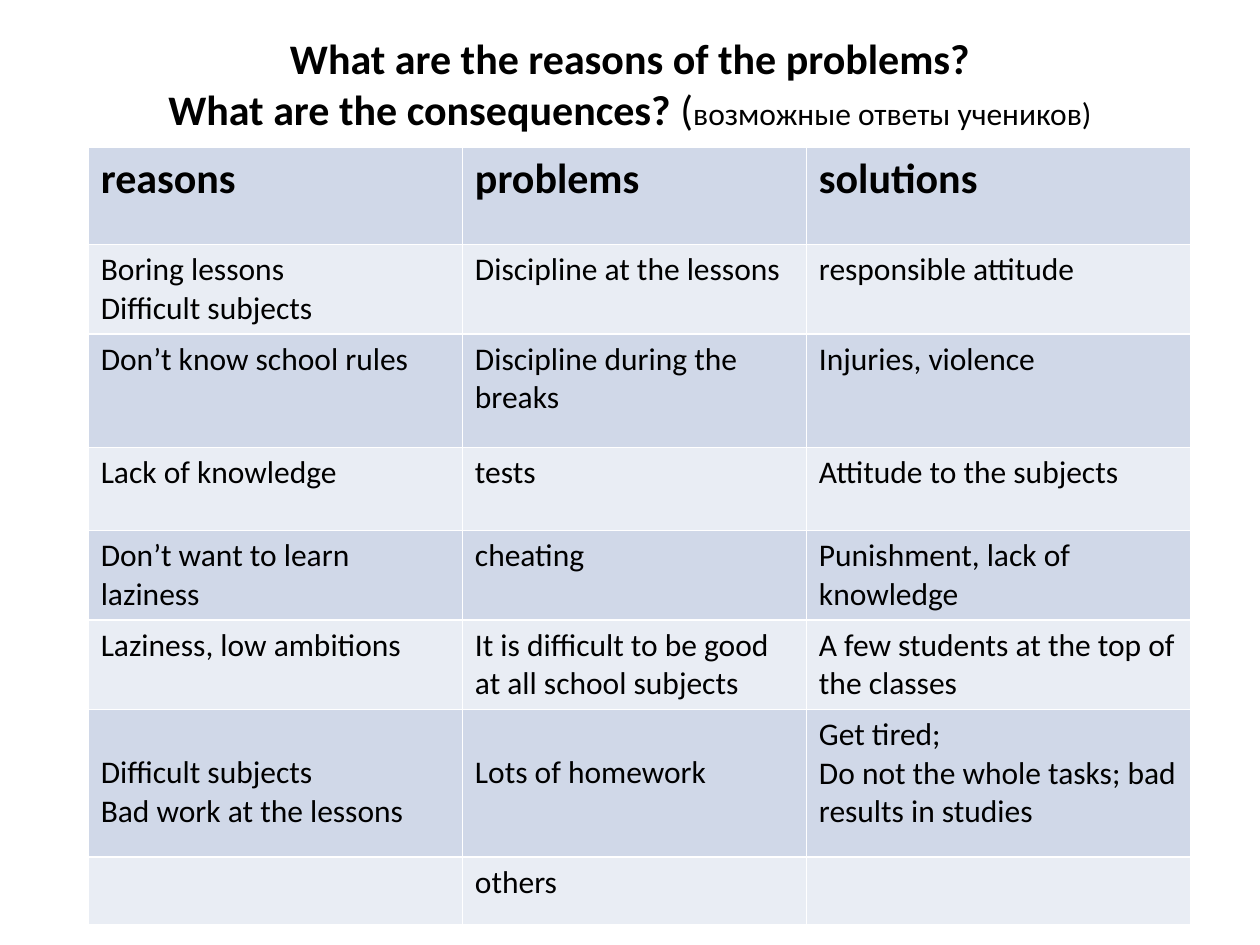
from lxml.etree import SubElement
from pptx import Presentation
from pptx.dml.color import RGBColor
from pptx.enum.text import MSO_ANCHOR, MSO_AUTO_SIZE, PP_ALIGN
from pptx.oxml.ns import qn
from pptx.util import Inches, Pt

SLIDE_WIDTH, SLIDE_HEIGHT = 10, 7.5
GRID_COLUMNS, GRID_ROWS = 100, 75

COLUMN_WIDTHS = [29.7, 27.3, 30.5]
ROW_HEIGHTS = [7.7, 7.1, 9, 6.6, 7.1, 7.1, 11.7, 5.4]
HEADINGS = ["reasons", "problems", "solutions"]
ANSWERS = [
    ["Boring lessons\nDifficult subjects", "Discipline at the lessons", "responsible attitude"],
    ["Don’t know school rules", "Discipline during the breaks", "Injuries, violence"],
    ["Lack of knowledge", "tests", "Attitude to the subjects"],
    ["Don’t want to learn\nlaziness", "cheating", "Punishment, lack of knowledge"],
    ["Laziness, low ambitions", "It is difficult to be good at all school subjects",
     "A few students at the top of the classes"],
    ["Difficult subjects\nBad work at the lessons", "Lots of homework",
     "Get tired;\nDo not the whole tasks; bad results in studies"],
    ["", "others", ""],
]
LOWERED_CELLS = [(6, 0), (6, 1)]


def color(hex_string):
    return RGBColor.from_string(hex_string)


def add_text(paragraph, text, size=18, bold=False, font="Calibri", fill="000000"):
    run = paragraph.add_run()
    run.text = text
    run.font.name = font
    run.font.size = Pt(size)
    run.font.bold = bold
    run.font.color.rgb = color(fill)


def across(columns):
    return Inches(SLIDE_WIDTH * columns / GRID_COLUMNS)


def down(rows):
    return Inches(SLIDE_HEIGHT * rows / GRID_ROWS)


class SlideBuilder:
    bands = ["D0D8E8", "E9EDF4"]
    border = "FFFFFF"
    heading_size = 24

    def __init__(self, presentation):
        self.slide = presentation.slides.add_slide(presentation.slide_layouts[5])

    def title(self, left, top, width, height, runs):
        """Fill the title placeholder with (text, format) pairs."""
        shape = self.slide.shapes.title
        shape.left, shape.top = across(left), down(top)
        shape.width, shape.height = across(width), down(height)
        frame = shape.text_frame
        frame.auto_size = MSO_AUTO_SIZE.NONE
        frame.word_wrap = True
        frame.vertical_anchor = MSO_ANCHOR.MIDDLE
        paragraph = frame.paragraphs[0]
        paragraph.alignment = PP_ALIGN.CENTER
        for text, text_format in runs:
            if text == "\n":
                paragraph.add_line_break()
            else:
                add_text(paragraph, text, **text_format)

    def table(self, left, top, widths, heights, rows):
        table = self.slide.shapes.add_table(
            len(heights), len(widths), across(left), down(top),
            across(sum(widths)), down(sum(heights))).table
        table.first_row = table.horz_banding = False
        for column, width in zip(table.columns, widths):
            column.width = across(width)
        for row, height in zip(table.rows, heights):
            row.height = down(height)
        for row_index, texts in enumerate(rows):
            for column_index, text in enumerate(texts):
                self.cell(table.cell(row_index, column_index), text, row_index)
        return table

    def cell(self, cell, text, row_index):
        self.cell_borders(cell)
        cell.fill.solid()
        cell.fill.fore_color.rgb = color(self.bands[row_index % len(self.bands)])
        is_heading = row_index == 0
        frame = cell.text_frame
        for index, line in enumerate(text.split("\n") if text else []):
            paragraph = frame.add_paragraph() if index else frame.paragraphs[0]
            add_text(paragraph, line, size=self.heading_size if is_heading else 18,
                     bold=is_heading)

    def cell_borders(self, cell):
        properties = cell._tc.get_or_add_tcPr()
        for side in ("a:lnL", "a:lnR", "a:lnT", "a:lnB"):
            line = SubElement(properties, qn(side), w=str(Pt(1)))
            fill = SubElement(line, qn("a:solidFill"))
            SubElement(fill, qn("a:srgbClr"), val=self.border)


def main():
    presentation = Presentation()
    presentation.slide_width = Inches(SLIDE_WIDTH)
    presentation.slide_height = Inches(SLIDE_HEIGHT)
    builder = SlideBuilder(presentation)

    strong = {"size": builder.heading_size, "bold": True}
    builder.title(5, 3, 90, 7.2, [
        ("What are the reasons of the problems?", strong),
        ("\n", {}),
        ("What are the consequences? ", strong),
        ("(", {"size": builder.heading_size}),
        ("возможные ответы учеников)", {"size": 18}),
    ])

    table = builder.table(7, 11.7, COLUMN_WIDTHS, ROW_HEIGHTS, [HEADINGS] + ANSWERS)
    for row, column in LOWERED_CELLS:
        table.cell(row, column).margin_top = Inches(0.35)

    presentation.save("out.pptx")


if __name__ == "__main__":
    main()
